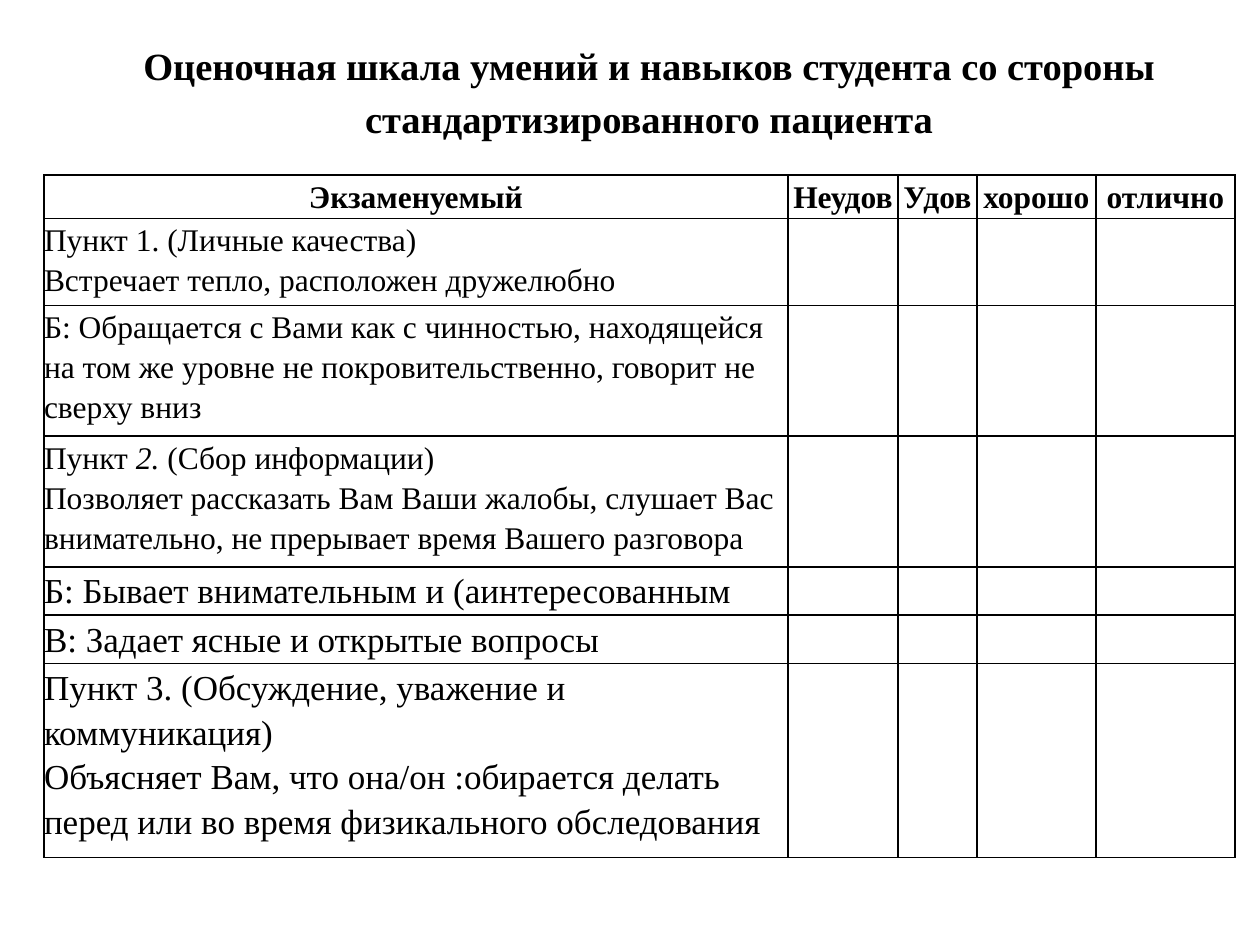
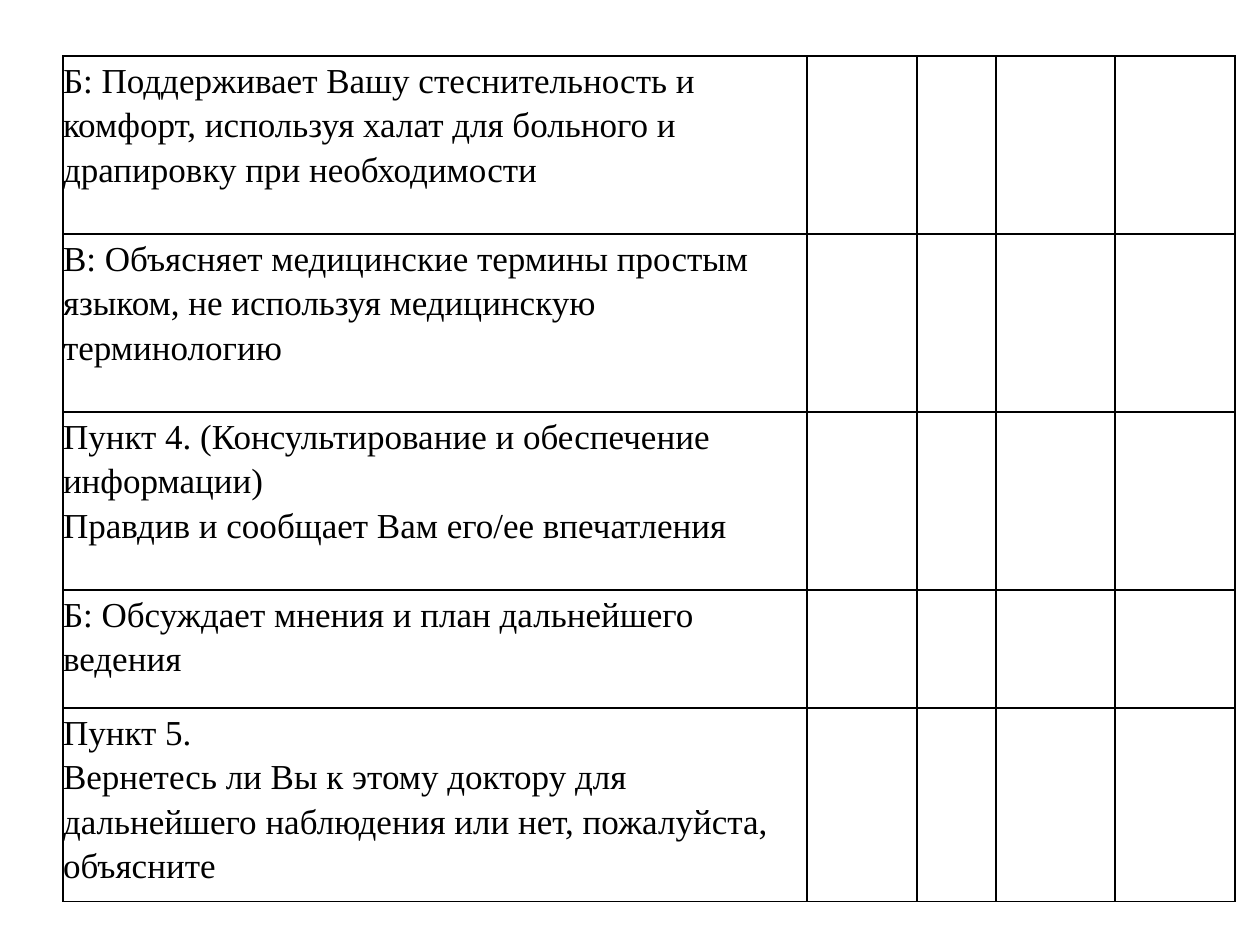
import pptx
import pptx.dml.color
import pptx.enum.text
import pptx.oxml
import pptx.oxml.ns
import pptx.util

EMU_PER_PX = 914400 // 126
COLORS = {"paper": "FFFFFF", "ink": "000000"}
FONT = "Times New Roman"
LINE_SPACING = 1.15
CRITERION_WIDTH, FAIL_WIDTH, PASS_WIDTH, GOOD_WIDTH = 744, 110, 79, 119
BORDER_XML = (
    '<a:{side} {ns} w="12700"><a:solidFill><a:srgbClr val="{color}"/></a:solidFill></a:{side}>'
)

GRADES_HEADER = ["Экзаменуемый", "Неудов", "Удов", "хорошо", "отлично"]

# Each row: height in px, text size in points, paragraphs; *...* marks italics.
FIRST_CRITERIA = [
    (87, 18, ["Пункт 1. (Личные качества)", "Встречает тепло, расположен дружелюбно"]),
    (130, 18, ["Б: Обращается с Вами как с чинностью, находящейся на том же уровне "
               "не покровительственно, говорит не сверху вниз"]),
    (131, 18, ["Пункт *2.* (Сбор информации)",
               "Позволяет рассказать Вам Ваши жалобы, слушает Вас внимательно, "
               "не прерывает время Вашего разговора"]),
    (48, 20, ["Б: Бывает внимательным и (аинтересованным"]),
    (48, 20, ["В: Задает ясные и открытые вопросы"]),
    (194, 20, ["Пункт 3. (Обсуждение, уважение и коммуникация)",
               "Объясняет Вам, что она/он :обирается делать перед или во время "
               "физикального обследования"]),
]
SECOND_CRITERIA = [
    (178, 20, ["Б: Поддерживает Вашу стеснительность и комфорт, используя халат "
               "для больного и драпировку при необходимости"]),
    (178, 20, ["В: Объясняет медицинские термины простым языком, "
               "не используя медицинскую терминологию"]),
    (178, 20, ["Пункт 4. (Консультирование и обеспечение информации)",
               "Правдив и сообщает Вам его/ее впечатления"]),
    (118, 20, ["Б: Обсуждает мнения и план дальнейшего ведения"]),
    (193, 20, ["Пункт 5.",
               "Вернетесь ли Вы к этому доктору для дальнейшего наблюдения или нет, "
               "пожалуйста, объясните"]),
]


def px(length):
    return pptx.util.Emu(length * EMU_PER_PX)


def rgb(name):
    return pptx.dml.color.RGBColor.from_string(COLORS[name])


def write_text(frame, lines, size, bold=False, centered=False):
    for number, line in enumerate(lines):
        paragraph = frame.add_paragraph() if number else frame.paragraphs[0]
        paragraph.line_spacing = LINE_SPACING
        paragraph.alignment = (
            pptx.enum.text.PP_ALIGN.CENTER if centered else pptx.enum.text.PP_ALIGN.LEFT
        )
        paragraph.font.name = FONT
        paragraph.font.size = pptx.util.Pt(size)
        paragraph.font.bold = bold
        paragraph.font.color.rgb = rgb("ink")
        for position, piece in enumerate(line.split("*")):
            run = paragraph.add_run()
            run.text = piece
            if position % 2:
                run.font.italic = True


def add_title(slide, box, title):
    frame = slide.shapes.add_textbox(*map(px, box)).text_frame
    frame.word_wrap = True
    write_text(frame, [title], 22, bold=True, centered=True)


def style_cell(cell):
    """White fill, no margins and a thin dark border on every side."""
    cell.margin_left = cell.margin_right = cell.margin_top = cell.margin_bottom = 0
    cell.fill.solid()
    cell.fill.fore_color.rgb = rgb("paper")
    properties = cell._tc.get_or_add_tcPr()
    for order, side in enumerate(("lnL", "lnR", "lnT", "lnB")):
        border = BORDER_XML.format(
            side=side, ns=pptx.oxml.ns.nsdecls("a"), color=COLORS["ink"]
        )
        properties.insert(order, pptx.oxml.parse_xml(border))


def add_grading_table(slide, box, criteria, header=None):
    left, top, width = box
    grade_widths = [CRITERION_WIDTH, FAIL_WIDTH, PASS_WIDTH, GOOD_WIDTH]
    column_widths = grade_widths + [width - sum(grade_widths)]
    heights = [43] if header else []
    heights += [height for height, _, _ in criteria]
    table = slide.shapes.add_table(
        len(heights), len(column_widths), px(left), px(top), px(width), px(sum(heights))
    ).table
    table.first_row = table.horz_banding = False
    for column, column_width in zip(table.columns, column_widths):
        column.width = px(column_width)
    for row, height in zip(table.rows, heights):
        row.height = px(height)
    for cell in table.iter_cells():
        style_cell(cell)

    for column, label in enumerate(header or []):
        write_text(table.cell(0, column).text_frame, [label], 18, bold=True, centered=True)
    first_criterion = 1 if header else 0
    for row, (_, size, lines) in enumerate(criteria, first_criterion):
        write_text(table.cell(row, 0).text_frame, lines, size)


def add_slide(deck):
    slide = deck.slides.add_slide(deck.slide_layouts[6])
    slide.background.fill.solid()
    slide.background.fill.fore_color.rgb = rgb("paper")
    return slide


def main():
    deck = pptx.Presentation()
    deck.slide_width, deck.slide_height = px(1260), px(945)

    opening = add_slide(deck)
    add_title(opening, (74, 29, 1150, 117),
              "Оценочная шкала умений и навыков студента со стороны "
              "стандартизированного пациента")
    add_grading_table(opening, (44, 175, 1191), FIRST_CRITERIA, GRADES_HEADER)

    continuation = add_slide(deck)
    add_grading_table(continuation, (63, 56, 1172), SECOND_CRITERIA)

    deck.save("out.pptx")


if __name__ == "__main__":
    main()
